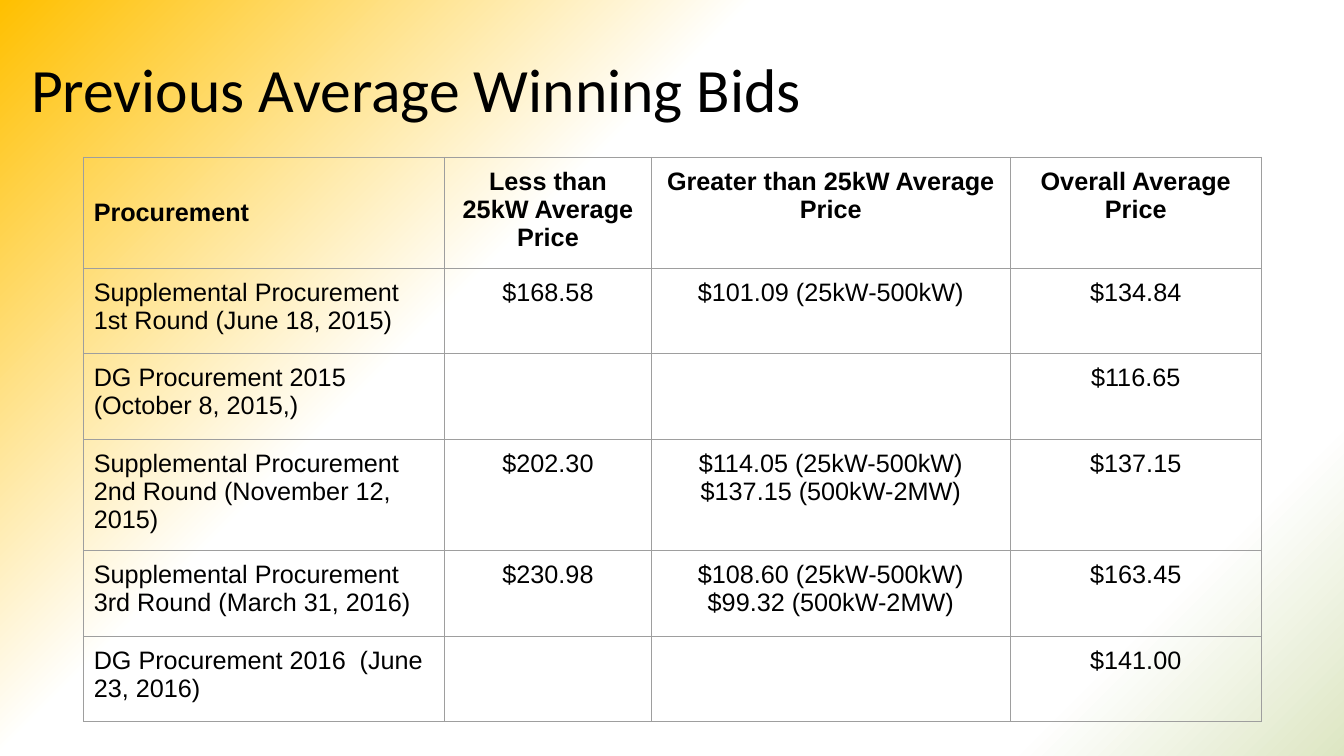
from lxml import etree
from pptx import Presentation
from pptx.dml.color import RGBColor as RGB
from pptx.enum.text import MSO_ANCHOR as Anchor, PP_ALIGN as Align
from pptx.oxml.ns import qn
from pptx.util import Inches, Pt

# Content
TITLE = "Previous Average Winning Bids"
HEAD = ["Procurement", "Less than 25kW Average Price",
        "Greater than 25kW Average Price", "Overall Average Price"]
# procurement, small price, large prices, overall price
BIDS = [
    ("Supplemental Procurement 1st Round (June 18, 2015)",
     "$168.58", "$101.09 (25kW-500kW)", "$134.84"),
    ("DG Procurement 2015 (October 8, 2015,)", "", "", "$116.65"),
    ("Supplemental Procurement 2nd Round (November 12, 2015)",
     "$202.30", "$114.05 (25kW-500kW)\n$137.15 (500kW-2MW)", "$137.15"),
    ("Supplemental Procurement 3rd Round (March 31, 2016)",
     "$230.98", "$108.60 (25kW-500kW)\n$99.32 (500kW-2MW)", "$163.45"),
    ("DG Procurement 2016  (June 23, 2016)", "", "", "$141.00"),
]
COLORS = {"text": "000000", "grid": "9E9E9E", "sun": "FFC000",
          "white": "FFFFFF", "leaf": "DDE6C3"}
STOPS = [(0, "sun"), (36, "white"), (84, "white"), (100, "leaf")]
WIDTHS = [3.58, 2.05, 3.56, 2.49]
TALL, SHORT = 1.04, 0.85
HEIGHTS = [TALL, SHORT, SHORT, TALL, SHORT, SHORT]
PAD = Inches(0.1)


def add(parent, tag, **attrs):
    return etree.SubElement(parent, qn(tag), attrs)


def add_color(parent, name):
    add(parent, "a:srgbClr", val=COLORS[name])


def write(para, text, font, size, bold=False):
    run = para.add_run()
    run.text = text
    run.font.name, run.font.size, run.font.bold = font, Pt(size), bold
    run.font.color.rgb = RGB.from_string(COLORS["text"])


def set_pad(box):
    box.margin_left = box.margin_right = PAD
    box.margin_top = box.margin_bottom = PAD


def set_grid(cell):
    props = cell._tc.get_or_add_tcPr()
    for side in ("L", "R", "T", "B"):
        line = add(props, "a:ln" + side, w=str(Pt(0.75)))
        add_color(add(line, "a:solidFill"), "grid")
    cell.fill.background()


deck = Presentation()
deck.slide_width, deck.slide_height = Inches(13.33), Inches(7.5)
slide = deck.slides.add_slide(deck.slide_layouts[6])

# Background: round gradient centred on the top left corner
slide.background.fill.solid()
back = slide._element.find(".//" + qn("p:bgPr"))
back.remove(back.find(qn("a:solidFill")))
grad = etree.Element(qn("a:gradFill"), rotWithShape="1")
back.insert(0, grad)
stops = add(grad, "a:gsLst")
for place, name in STOPS:
    add_color(add(stops, "a:gs", pos=str(place * 1000)), name)
round_path = add(grad, "a:path", path="circle")
add(round_path, "a:fillToRect", r="100000", b="100000")

# Title
frame = slide.shapes.add_textbox(Inches(0.21), Inches(0.18),
                                 Inches(8.36), Inches(1.47)).text_frame
frame.word_wrap = True
frame.vertical_anchor = Anchor.MIDDLE
set_pad(frame)
frame.paragraphs[0].line_spacing = 0.9
write(frame.paragraphs[0], TITLE, "Calibri", 44)

# Table of bids
rows = [HEAD, *BIDS]
table = slide.shapes.add_table(
    len(rows), len(HEAD), Inches(0.83), Inches(1.56),
    Inches(sum(WIDTHS)), Inches(sum(HEIGHTS))).table
table.first_row = table.horz_banding = False
for col, width in zip(table.columns, WIDTHS):
    col.width = Inches(width)
for row, height in zip(table.rows, HEIGHTS):
    row.height = Inches(height)

for r, texts in enumerate(rows):
    for c, text in enumerate(texts):
        cell = table.cell(r, c)
        set_grid(cell)
        set_pad(cell)
        corner = r == 0 and c == 0
        cell.vertical_anchor = Anchor.MIDDLE if corner else Anchor.TOP
        for i, part in enumerate(text.split("\n") if text else []):
            body = cell.text_frame
            para = body.add_paragraph() if i else body.paragraphs[0]
            para.alignment = Align.CENTER if c else Align.LEFT
            write(para, part, "Arial", 18, bold=r == 0)

deck.save("out.pptx")
